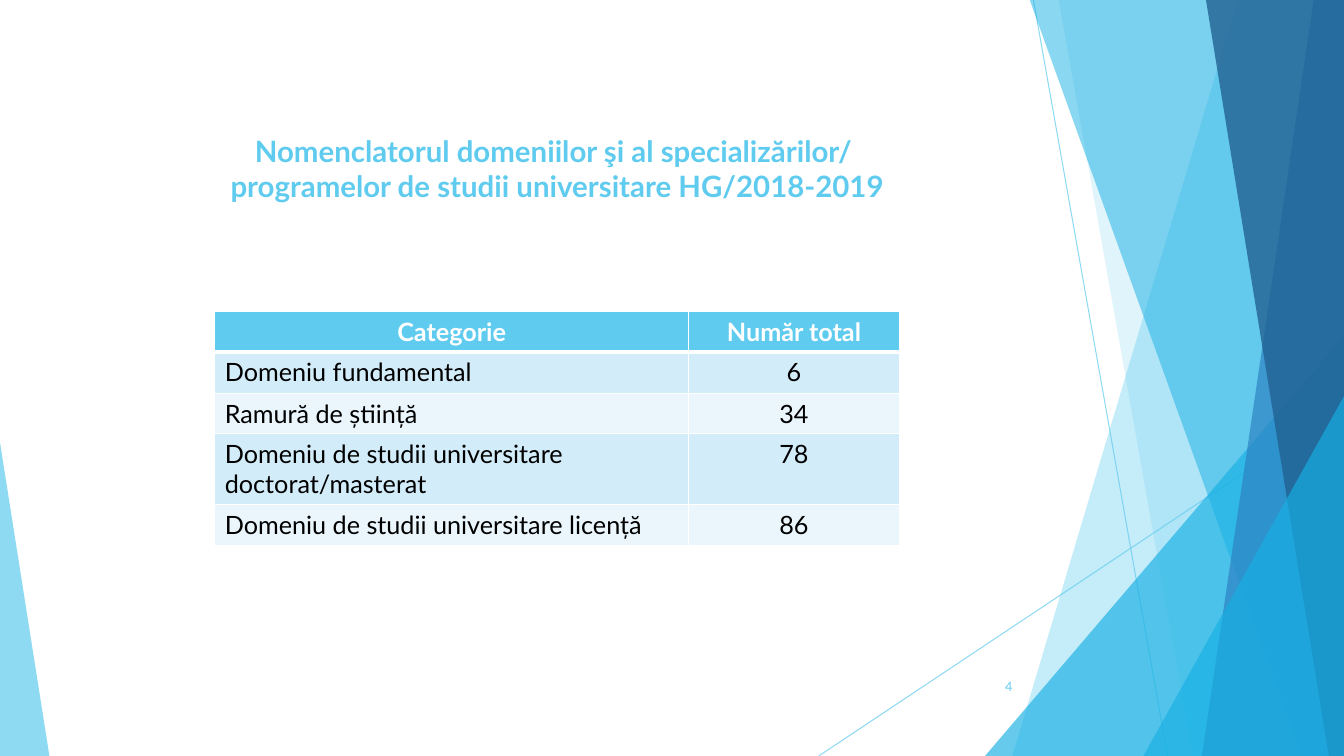
import lxml.etree
import pptx
import pptx.dml.color
import pptx.enum.shapes
import pptx.enum.text
import pptx.oxml.ns
import pptx.util

Inches = pptx.util.Inches
Pt = pptx.util.Pt
qn = pptx.oxml.ns.qn
PP_ALIGN = pptx.enum.text.PP_ALIGN
MIDDLE = pptx.enum.text.MSO_ANCHOR.MIDDLE

WIDTH, HEIGHT = 13.33, 7.5
FONT = "Lato"
COLORS = {
    "sky": "5FCBEF",
    "cyan": "17B0E4",
    "blue": "2E83C3",
    "navy": "226292",
    "band_dark": "D2ECF9",
    "band_light": "EAF6FC",
    "white": "FFFFFF",
    "black": "000000",
}
ROWS = [
    ("Categorie", "Număr total"),
    ("Domeniu fundamental", "6"),
    ("Ramură de știință", "34"),
    ("Domeniu de studii universitare doctorat/masterat", "78"),
    ("Domeniu de studii universitare licență", "86"),
]
COLUMN_WIDTHS = [4.7, 2.09]
ROW_HEIGHTS = [0.4, 0.41, 0.4, 0.7, 0.41]


def rgb(name):
    return pptx.dml.color.RGBColor.from_string(COLORS[name])


def set_opacity(shape, percent):
    for color in shape.element.spPr.iter(qn("a:srgbClr")):
        lxml.etree.SubElement(color, qn("a:alpha"), val=str(percent * 1000))


def paint(shape, color, opacity):
    shape.shadow.inherit = False
    shape.fill.solid()
    shape.fill.fore_color.rgb = rgb(color)
    shape.line.fill.background()
    set_opacity(shape, opacity)


def format_paragraph(paragraph, size, color, alignment, bold=False):
    paragraph.alignment = alignment
    paragraph.font.name = FONT
    paragraph.font.size = Pt(size)
    paragraph.font.bold = bold
    paragraph.font.color.rgb = rgb(color)


def add_thin_line(slide, start, end):
    points = [Inches(value) for value in (*start, *end)]
    line = slide.shapes.add_connector(pptx.enum.shapes.MSO_CONNECTOR.STRAIGHT, *points)
    line.line.width = Pt(0.75)
    line.line.color.rgb = rgb("sky")
    set_opacity(line, 70)
    lxml.etree.SubElement(line.element.spPr, qn("a:effectLst"))


def add_panel(slide, top_left, bottom_left, color, opacity):
    corners = [(top_left, -0.01), (WIDTH, -0.01), (WIDTH, HEIGHT), (bottom_left, HEIGHT)]
    points = [(Inches(x), Inches(y)) for x, y in corners]
    builder = slide.shapes.build_freeform(*points[0])
    builder.add_line_segments(points[1:])
    paint(builder.convert_to_shape(), color, opacity)


def add_corner(slide, left, top, width, apex, color, opacity):
    triangle = slide.shapes.add_shape(
        pptx.enum.shapes.MSO_SHAPE.ISOSCELES_TRIANGLE,
        Inches(left), Inches(top), Inches(width), Inches(HEIGHT - top))
    triangle.adjustments[0] = apex
    paint(triangle, color, opacity)


def add_facets(slide):
    add_thin_line(slide, (10.25, 0), (11.58, HEIGHT))
    add_thin_line(slide, (WIDTH, 4.03), (8.12, HEIGHT))
    add_panel(slide, 12.28, 10.04, "sky", 36)
    add_panel(slide, 10.5, 11.83, "sky", 20)
    add_corner(slide, 9.77, 3.33, 3.56, 1, "cyan", 66)
    add_panel(slide, 10.21, 12.91, "cyan", 50)
    add_panel(slide, 13.03, 11.92, "blue", 70)
    add_panel(slide, 11.96, 13.18, "navy", 80)
    add_corner(slide, 11.34, 3.93, 1.99, 1, "cyan", 66)
    add_corner(slide, 0, 4.39, 0.49, 0, "sky", 70)


def place_title(slide, left, top, width, height):
    title = slide.shapes.title
    title.left, title.top = Inches(left), Inches(top)
    title.width, title.height = Inches(width), Inches(height)
    frame = title.text_frame
    frame.text = ("Nomenclatorul domeniilor şi al specializărilor/ \v"
                  "programelor de studii universitare HG/2018-2019")
    frame.word_wrap = True
    frame.auto_size = pptx.enum.text.MSO_AUTO_SIZE.NONE
    frame.vertical_anchor = MIDDLE
    format_paragraph(frame.paragraphs[0], 21, "sky", PP_ALIGN.CENTER, True)


def add_borders(cell, row_index):
    properties = cell._tc.get_or_add_tcPr()
    widths = {
        "L": 1,
        "R": 1,
        "T": 3 if row_index == 1 else 1,
        "B": 3 if row_index == 0 else 1,
    }
    for side, width in widths.items():
        border = lxml.etree.SubElement(properties, qn(f"a:ln{side}"), w=str(Pt(width)))
        fill = lxml.etree.SubElement(border, qn("a:solidFill"))
        lxml.etree.SubElement(fill, qn("a:srgbClr"), val=COLORS["white"])


def add_category_table(slide, left, top):
    table = slide.shapes.add_table(
        len(ROWS), len(COLUMN_WIDTHS), Inches(left), Inches(top),
        Inches(sum(COLUMN_WIDTHS)), Inches(sum(ROW_HEIGHTS))).table
    for column, width in zip(table.columns, COLUMN_WIDTHS):
        column.width = Inches(width)
    for row_index, (texts, height) in enumerate(zip(ROWS, ROW_HEIGHTS)):
        table.rows[row_index].height = Inches(height)
        header = row_index == 0
        band = "sky" if header else "band_dark" if row_index % 2 else "band_light"
        for column_index, text in enumerate(texts):
            cell = table.cell(row_index, column_index)
            cell.text = text
            centered = header or column_index == 1
            format_paragraph(
                cell.text_frame.paragraphs[0], 18, "white" if header else "black",
                PP_ALIGN.CENTER if centered else PP_ALIGN.LEFT, header)
            add_borders(cell, row_index)
            cell.fill.solid()
            cell.fill.fore_color.rgb = rgb(band)


def add_page_number(slide, left, top, width, height):
    box = slide.shapes.add_textbox(Inches(left), Inches(top), Inches(width), Inches(height))
    frame = box.text_frame
    frame.word_wrap = True
    frame.vertical_anchor = MIDDLE
    frame.text = "4"
    format_paragraph(frame.paragraphs[0], 9, "sky", PP_ALIGN.RIGHT)


def main():
    presentation = pptx.Presentation()
    presentation.slide_width = Inches(WIDTH)
    presentation.slide_height = Inches(HEIGHT)
    slide = presentation.slides.add_slide(presentation.slide_layouts[5])
    add_facets(slide)
    place_title(slide, 0.69, 1.27, 9.67, 0.8)
    add_category_table(slide, 2.13, 3.09)
    add_page_number(slide, 9.39, 6.61, 0.75, 0.4)
    presentation.save("out.pptx")


if __name__ == "__main__":
    main()
